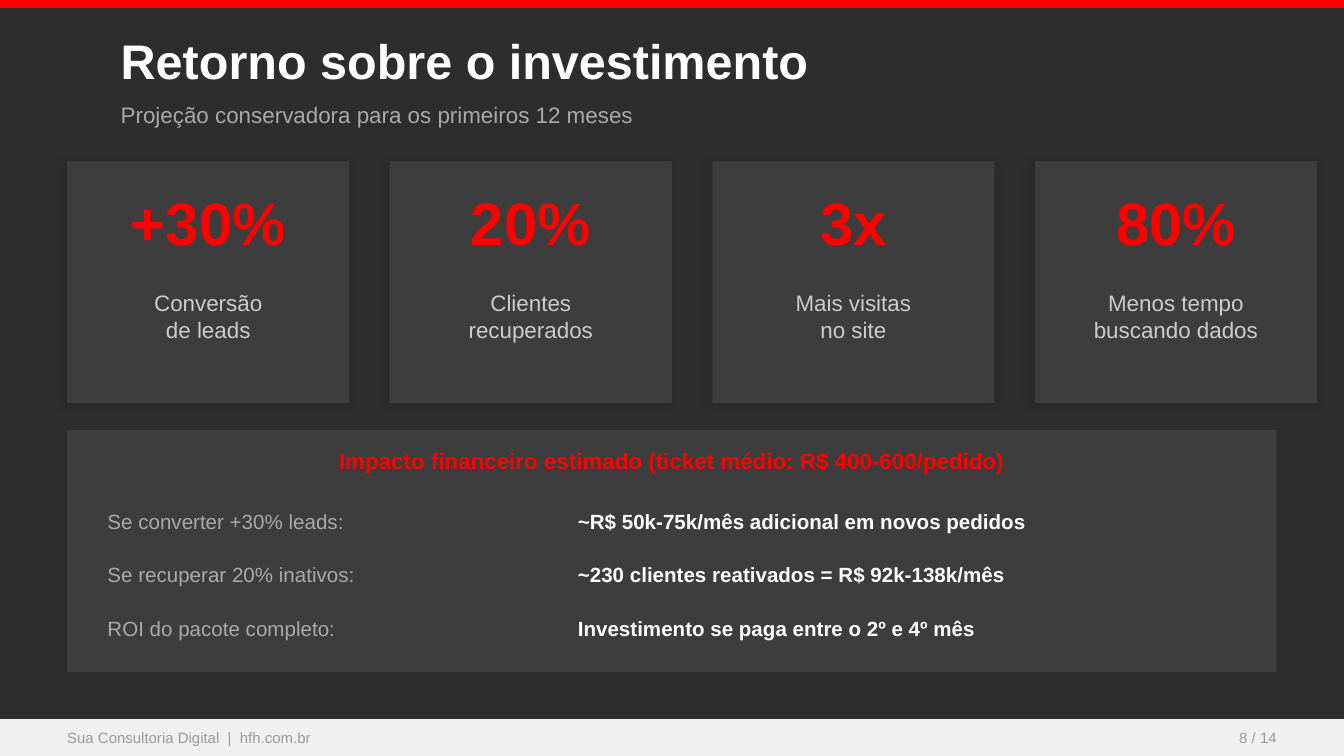
from dataclasses import dataclass

from lxml.etree import SubElement as Sub
from pptx import Presentation
from pptx.dml.color import RGBColor as Rgb
from pptx.enum.shapes import MSO_SHAPE as Shape
from pptx.enum.text import MSO_ANCHOR as Anchor, PP_ALIGN as Align
from pptx.oxml.ns import qn
from pptx.util import Emu, Pt

SCALE = 4572
WIDE, HIGH = 2000, 1125


@dataclass(frozen=True)
class Theme:
    """Colours, type sizes and font of the deck."""
    font: str = "Arial"
    back: str = "2D2D2D"
    card: str = "3D3D3D"
    foot: str = "F0F0F0"
    red: str = "FF0000"
    white: str = "FFFFFF"
    pale: str = "CCCCCC"
    grey: str = "AAAAAA"
    dim: str = "999999"
    shade: str = "000000"
    title: int = 26
    stat: int = 32
    body: int = 12
    row: int = 11
    small: int = 8


THEME = Theme()
CARDS = [
    ("+30%", "Conversão\nde leads"),
    ("20%", "Clientes\nrecuperados"),
    ("3x", "Mais visitas\nno site"),
    ("80%", "Menos tempo\nbuscando dados"),
]
ROWS = [
    ("Se converter +30% leads:", "~R$ 50k-75k/mês adicional em novos pedidos"),
    ("Se recuperar 20% inativos:", "~230 clientes reativados = R$ 92k-138k/mês"),
    ("ROI do pacote completo:", "Investimento se paga entre o 2º e 4º mês"),
]


def px(num):
    """Turn px into EMU."""
    return Emu(num * SCALE)


def add_rect(slide, box, fill):
    """Add a plain filled rectangle."""
    rect = slide.shapes.add_shape(Shape.RECTANGLE, *map(px, box))
    rect.shadow.inherit = False
    rect.fill.solid()
    rect.fill.fore_color.rgb = Rgb.from_string(fill)
    rect.line.fill.background()
    return rect


def add_shade(shape):
    """Give a shape a soft outer shadow."""
    effects = shape._element.spPr.find(qn("a:effectLst"))
    outer = Sub(effects, qn("a:outerShdw"), blurRad=str(Pt(6)), dist=str(Pt(2)),
                dir=str(135 * 60000), algn="bl", rotWithShape="0")
    tint = Sub(outer, qn("a:srgbClr"), val=THEME.shade)
    Sub(tint, qn("a:alpha"), val="12000")


def add_text(slide, box, text, size, tint, bold=False, align=Align.LEFT,
             anchor=Anchor.MIDDLE, flush=False):
    """Add a wrapped text box, one paragraph per line."""
    frame = slide.shapes.add_textbox(*map(px, box)).text_frame
    frame.word_wrap = True
    frame.vertical_anchor = anchor
    if flush:
        frame.margin_left = frame.margin_right = 0
        frame.margin_top = frame.margin_bottom = 0
    frame.text = text
    for para in frame.paragraphs:
        para.alignment = align
        for run in para.runs:
            run.font.name = THEME.font
            run.font.size = Pt(size)
            run.font.bold = bold
            run.font.color.rgb = Rgb.from_string(tint)


def add_card(slide, left, stat, label):
    """Add a card with a big figure and its label."""
    add_shade(add_rect(slide, (left, 240, 420, 360), THEME.card))
    add_text(slide, (left, 260, 420, 140), stat, THEME.stat, THEME.red,
             bold=True, align=Align.CENTER)
    add_text(slide, (left, 420, 420, 120), label, THEME.body, THEME.pale,
             align=Align.CENTER, anchor=Anchor.TOP)


def add_row(slide, top, label, value):
    """Add one label and value of the impact panel."""
    add_text(slide, (160, top, 700, 70), label, THEME.row, THEME.grey, flush=True)
    add_text(slide, (860, top, 1000, 70), value, THEME.row, THEME.white,
             bold=True, flush=True)


def add_head(slide):
    """Add the top bar, title and subtitle."""
    add_rect(slide, (0, 0, WIDE, 12), THEME.red)
    add_text(slide, (160, 40, 1680, 100), "Retorno sobre o investimento",
             THEME.title, THEME.white, bold=True)
    add_text(slide, (160, 140, 1680, 60),
             "Projeção conservadora para os primeiros 12 meses",
             THEME.body, THEME.grey)


def add_panel(slide):
    """Add the impact panel with its rows."""
    add_rect(slide, (100, 640, 1800, 360), THEME.card)
    add_text(slide, (100, 650, 1800, 70),
             "Impacto financeiro estimado (ticket médio: R$ 400-600/pedido)",
             THEME.body, THEME.red, bold=True, align=Align.CENTER)
    for num, (label, value) in enumerate(ROWS):
        add_row(slide, 740 + 80 * num, label, value)


def add_foot(slide):
    """Add the footer band with its texts."""
    top, tall = 1070, 55
    add_rect(slide, (0, top, WIDE, tall), THEME.foot)
    add_text(slide, (100, top, 1000, tall), "Sua Consultoria Digital  |  hfh.com.br",
             THEME.small, THEME.dim, flush=True)
    add_text(slide, (1500, top, 400, tall), "8 / 14", THEME.small, THEME.dim,
             align=Align.RIGHT, flush=True)


def main():
    """Build and save the slide."""
    deck = Presentation()
    deck.slide_width, deck.slide_height = px(WIDE), px(HIGH)
    slide = deck.slides.add_slide(deck.slide_layouts[6])
    slide.background.fill.solid()
    slide.background.fill.fore_color.rgb = Rgb.from_string(THEME.back)
    add_head(slide)
    for num, (stat, label) in enumerate(CARDS):
        add_card(slide, 100 + 480 * num, stat, label)
    add_panel(slide)
    add_foot(slide)
    deck.save("out.pptx")


if __name__ == "__main__":
    main()
